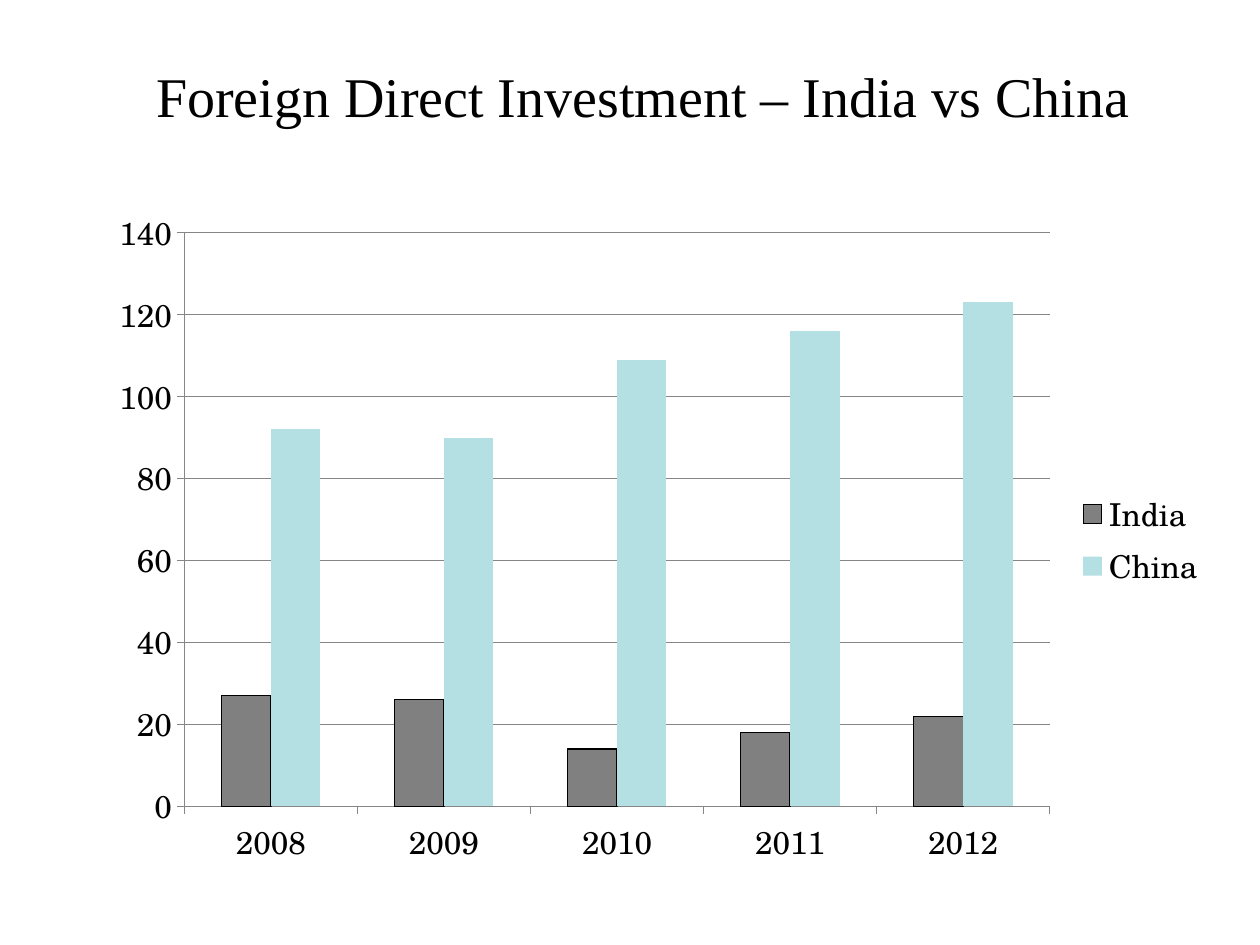
from lxml.etree import SubElement as Sub
from pptx import Presentation
from pptx.chart.data import CategoryChartData as Data
from pptx.dml.color import RGBColor as RGB
from pptx.enum.chart import XL_CHART_TYPE as Kind, XL_LEGEND_POSITION as Pos
from pptx.enum.chart import XL_TICK_MARK as Tick
from pptx.oxml.ns import qn
from pptx.util import Inches, Pt

# Content
TITLE = "Foreign Direct Investment – India vs China"
YEARS = ["2008", "2009", "2010", "2011", "2012"]
FLOWS = {
    "India": [27, 26, 14, 18, 22],
    "China": [92, 90, 109, 116, 123],
}
HUES = {"India": "808080", "China": "B5E0E3", "ink": "000000", "grid": "868686"}

# Places: left, top, width, height as shares of the slide
WIDE, HIGH = Inches(10), Inches(7.5)
HEAD = (0.114, 0.052, 0.843, 0.125)
BODY = (0.075, 0.21, 0.892, 0.723)
PLOT = {"x": 0.08, "y": 0.05, "w": 0.77, "h": 0.84}  # shares of the chart


def place(box):
    return [int(part * side) for part, side in zip(box, (WIDE, HIGH) * 2)]


def hue(name):
    return RGB.from_string(HUES[name])


def style(font, face, size):
    font.name, font.size = face, Pt(size)
    font.color.rgb = hue("ink")


def rule(line, name, width=0.75):
    line.color.rgb = hue(name)
    line.width = Pt(width)


deck = Presentation()
deck.slide_width, deck.slide_height = WIDE, HIGH
slide = deck.slides.add_slide(deck.slide_layouts[6])

# Chart
data = Data()
data.categories = YEARS
for name, vals in FLOWS.items():
    data.add_series(name, vals)
chart = slide.shapes.add_chart(Kind.COLUMN_CLUSTERED, *place(BODY), data).chart
chart.has_title = False
style(chart.font, "TeX Gyre Schola", 18)

plot = chart.plots[0]
plot.gap_width, plot.overlap, plot.vary_by_categories = 150, 0, False
for bars in plot.series:
    bars.format.fill.solid()
    bars.format.fill.fore_color.rgb = hue(bars.name)
    if bars.name == "India":
        rule(bars.format.line, "ink")
    else:
        bars.format.line.fill.background()

# Axes and legend
for axis in (chart.category_axis, chart.value_axis):
    axis.major_tick_mark, axis.minor_tick_mark = Tick.OUTSIDE, Tick.NONE
    rule(axis.format.line, "grid")
scale = chart.value_axis
scale.minimum_scale, scale.maximum_scale, scale.major_unit = 0, 140, 20
scale.has_major_gridlines = True
rule(scale.major_gridlines.format.line, "grid")
chart.has_legend = True
chart.legend.position = Pos.RIGHT
chart.legend.include_in_layout = False

# Fixed inner plot area
area = chart.plots[0].series[0].format and chart.element.find(".//" + qn("c:plotArea"))
for old in area.findall(qn("c:layout")):
    area.remove(old)
frame = Sub(area, qn("c:layout"))
area.insert(0, frame)
inner = Sub(frame, qn("c:manualLayout"))
marks = {"layoutTarget": "inner", "xMode": "edge", "yMode": "edge", **PLOT}
for tag, val in marks.items():
    Sub(inner, qn("c:" + tag)).set("val", str(val))

# Title
text = slide.shapes.add_textbox(*place(HEAD)).text_frame
text.word_wrap = True
text.margin_top = Inches(0.1)
para = text.paragraphs[0]
para.text = TITLE
style(para.font, "Times New Roman", 32)

deck.save("out.pptx")
